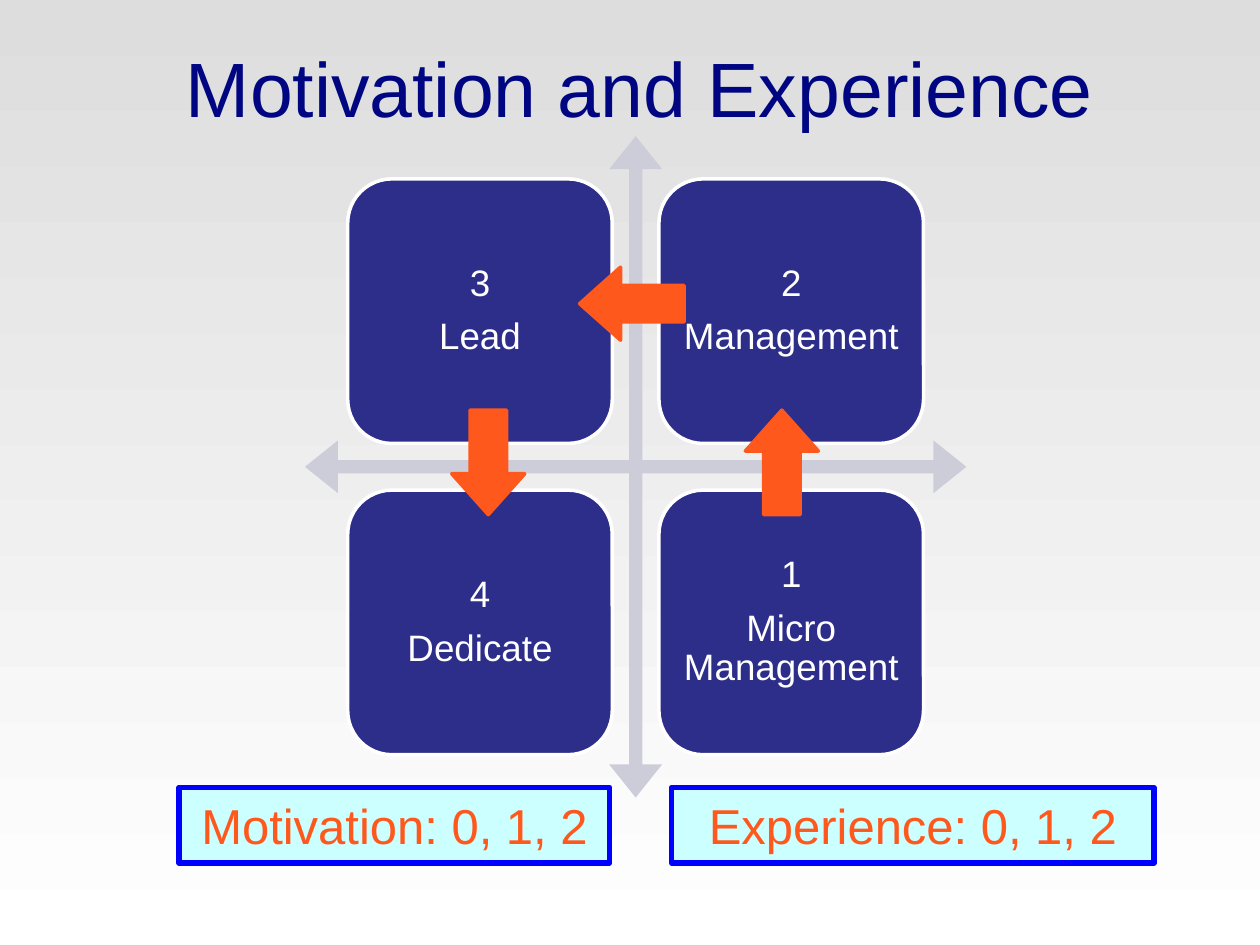
from pptx import Presentation
from pptx import util as u
from pptx.dml.color import RGBColor
from pptx.enum import shapes, text

Inches, Pt = u.Inches, u.Pt
SHAPE = shapes.MSO_SHAPE
ORANGE = "FF581D"


def rgb(value):
    return RGBColor.from_string(value)


def add_shape(kind, box, fill, line=None, width=2):
    sp = s.shapes.add_shape(kind, *map(Inches, box))
    sp.shadow.inherit = False
    sp.fill.solid()
    sp.fill.fore_color.rgb = rgb(fill)
    if line:
        sp.line.color.rgb = rgb(line)
        sp.line.width = Pt(width)
    else:
        sp.line.fill.background()
    return sp


def write(sp, lines, size, color, after=0):
    tf = sp.text_frame
    tf.word_wrap = True
    tf.vertical_anchor = text.MSO_ANCHOR.MIDDLE
    tf.text = "\n".join(lines)
    for p in tf.paragraphs:
        p.alignment = text.PP_ALIGN.CENTER
        for key, value in {"name": "Arial", "size": Pt(size)}.items():
            setattr(p.font, key, value)
        p.font.color.rgb = rgb(color)
    if after:
        tf.paragraphs[0].space_after = Pt(after)
    return tf


prs = Presentation()
prs.slide_width, prs.slide_height = Inches(10), Inches(7.5)
s = prs.slides.add_slide(prs.slide_layouts[5])

# Background: grey fading down to white
bg = s.background.fill
bg.gradient()
bg.gradient_angle = 270
for stop, (position, color) in zip(bg.gradient_stops, [(0, "DDDDDD"), (1, "FFFFFF")]):
    stop.position = position
    stop.color.rgb = rgb(color)

# Title
title = s.shapes.title
title.left, title.top, title.width, title.height = map(Inches, (0.58, 0.25, 9, 0.87))
write(title, ["Motivation and Experience"], 44, "000681")

# Score boxes
for left, width, label in [(1.42, 3.42, "Motivation"), (5.33, 3.83, "Experience")]:
    sp = add_shape(SHAPE.RECTANGLE, (left, 6.25, width, 0.6), "CCFFFF", "0000FF", 3)
    write(sp, [f"{label}: 0, 1, 2"], 28, ORANGE)

# Axes
axes = add_shape(SHAPE.QUAD_ARROW, (2.42, 1.08, 5.25, 5.25), "CDCDDA")
for i, value in enumerate([0.02, 0.04, 0.05]):
    axes.adjustments[i] = value

# Quadrants
quadrants = [("3", "Lead"), ("2", "Management"),
             ("4", "Dedicate"), ("1", "Micro Management")]
for i, lines in enumerate(quadrants):
    row, col = divmod(i, 2)
    box = (2.76 + 2.47 * col, 1.42 + 2.47 * row, 2.1, 2.1)
    sp = add_shape(SHAPE.ROUNDED_RECTANGLE, box, "2D2D8A", "FFFFFF")
    tf = write(sp, lines, 21, "FFFFFF", after=8)
    for side in ("left", "top", "right", "bottom"):
        setattr(tf, f"margin_{side}", 0)
    for p in tf.paragraphs:
        p.line_spacing = 0.9

# Arrows from quadrant 1 to 4
for left, top, rotation in [(5.79, 3.38, 270), (4.6, 2.12, 180), (3.46, 3.38, 90)]:
    sp = add_shape(SHAPE.RIGHT_ARROW, (left, top, 0.83, 0.58), ORANGE, ORANGE)
    sp.adjustments[1] = 0.56
    sp.rotation = rotation

prs.save("out.pptx")
